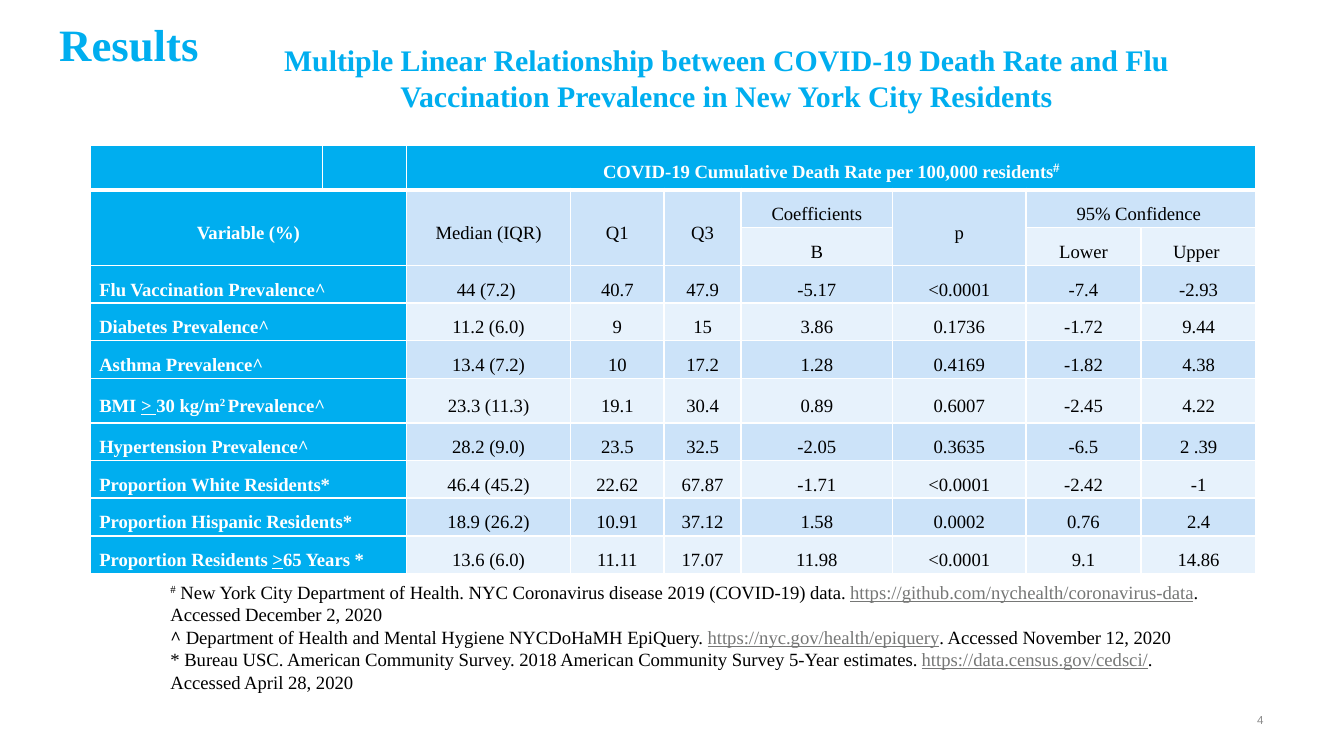
"""Build the regression results slide with its table and source notes."""
from lxml.etree import SubElement
from pptx import Presentation
from pptx.dml.color import RGBColor
from pptx.enum.text import MSO_ANCHOR as Anchor, MSO_AUTO_SIZE as AutoSize, PP_ALIGN as Align
from pptx.oxml.ns import qn
from pptx.util import Pt

SERIF = "Times New Roman"
BLUE, WHITE, BLACK, GREY = "00AEEF", "FFFFFF", "000000", "767776"
STRIPES = ["E7F2FC", "CCE3F9"]


def color(hex_text):
    return RGBColor.from_string(hex_text)


def add_span(para, text, size, hex_text, bold=False, style="", face=SERIF):
    span = para.add_run()
    span.text = text
    span.font.name = face
    span.font.size = Pt(size)
    span.font.bold = bold
    span.font.color.rgb = color(hex_text)
    if style == "underline":
        span.font.underline = True
    if style == "super":
        span.font._element.set("baseline", "30000")


deck = Presentation()
deck.slide_width, deck.slide_height = Pt(720), Pt(405)
page = deck.slides.add_slide(deck.slide_layouts[5])

number_box = page.shapes.add_textbox(Pt(516), Pt(375), Pt(168), Pt(21.6))
number_box.text_frame.vertical_anchor = Anchor.MIDDLE
number_para = number_box.text_frame.paragraphs[0]
number_para.alignment = Align.RIGHT
add_span(number_para, "4", 6.2, "8C8C8C", face="Arial")

heading_box = page.shapes.add_textbox(Pt(106), Pt(18.7), Pt(566.6), Pt(46))
heading_box.text_frame.word_wrap = True
heading_para = heading_box.text_frame.paragraphs[0]
heading_para.alignment = Align.CENTER
add_span(heading_para, "Multiple Linear Relationship between COVID-19 Death Rate and Flu "
         "Vaccination Prevalence in New York City Residents", 16, BLUE, True)

title = page.shapes.title
title.left, title.top, title.width, title.height = Pt(24.5), Pt(5), Pt(648), Pt(36.7)
title.text_frame.auto_size = AutoSize.NONE
title.text_frame.vertical_anchor = Anchor.MIDDLE
title_para = title.text_frame.paragraphs[0]
title_para.alignment = Align.LEFT
add_span(title_para, "Results", 24, BLUE, True)

rows = [
    ["", "", [("COVID-19 Cumulative Death Rate per 100,000 residents", ""), ("#", "super")]] + [""] * 6,
    ["Variable (%)", "", "Median (IQR)", "Q1", "Q3", "Coefficients", "p", "95% Confidence ", ""],
    ["", "", "", "", "", "B", "", "Lower", "Upper "],
    ["Flu Vaccination Prevalence^", "", "44 (7.2) ", "40.7", "47.9", "-5.17", "<0.0001", "-7.4", "-2.93"],
    ["Diabetes Prevalence^", "", "11.2 (6.0)", "9", "15", "3.86", "0.1736", "-1.72", "9.44"],
    ["Asthma Prevalence^", "", "13.4 (7.2)", "10", "17.2", "1.28", "0.4169", "-1.82", "4.38"],
    [[("BMI ", ""), ("> ", "underline"), ("30 kg/m", ""), ("2 ", "super"), ("Prevalence^", "")],
     "", "23.3 (11.3)", "19.1", "30.4", "0.89", "0.6007", "-2.45", "4.22"],
    ["Hypertension Prevalence^", "", "28.2 (9.0)", "23.5", "32.5", "-2.05", "0.3635", "-6.5", "2 .39".replace(" .", " .")],
    ["Proportion White Residents*", "", "46.4 (45.2)", "22.62", "67.87", "-1.71", "<0.0001", "-2.42", "-1"],
    ["Proportion Hispanic Residents*", "", "18.9 (26.2)", "10.91", "37.12", "1.58", "0.0002", "0.76", "2.4"],
    [[("Proportion Residents ", ""), (">", "underline"), ("65 Years *", "")],
     "", "13.6 (6.0)", "11.11", "17.07", "11.98", "<0.0001", "9.1", "14.86"],
]
widths = [124.5, 45.2, 87.7, 50.3, 41.1, 81.3, 71.4, 61.7, 61.7]
table = page.shapes.add_table(len(rows), len(widths), Pt(48.2), Pt(78), Pt(sum(widths)), Pt(229.8)).table
for column, width in zip(table.columns, widths):
    column.width = Pt(width)
for index, row in enumerate(table.rows):
    row.height = Pt(23.8 if index in (0, 6) else 20.2)

for row_index, values in enumerate(rows):
    for column_index, value in enumerate(values):
        cell = table.cell(row_index, column_index)
        header = row_index == 0 or column_index < 2
        cell.margin_left = cell.margin_right = Pt(5)
        cell.margin_top = cell.margin_bottom = Pt(0)
        cell.vertical_anchor = Anchor.MIDDLE
        properties = cell._tc.get_or_add_tcPr()
        for side in "LRTB":
            thick = (row_index, side) in [(0, "B"), (1, "T")]
            line = SubElement(properties, qn(f"a:ln{side}"), w=str(Pt(3 if thick else 1)))
            SubElement(SubElement(line, qn("a:solidFill")), qn("a:srgbClr"), val=WHITE)
        cell.fill.solid()
        cell.fill.fore_color.rgb = color(BLUE if header else STRIPES[row_index % 2])
        if value:
            para = cell.text_frame.paragraphs[0]
            para.alignment = Align.JUSTIFY if column_index == 0 and row_index > 2 else Align.CENTER
            para.line_spacing = Pt(17)
            for text, style in [(value, "")] if isinstance(value, str) else value:
                size = 12 if text == "#" else 10
                add_span(para, text, size, WHITE if header else BLACK, header, style)

merges = [(0, 2, 0, 8), (1, 0, 2, 1), (1, 7, 1, 8)]
merges += [(1, column, 2, column) for column in (2, 3, 4, 6)]
merges += [(row, 0, row, 1) for row in range(3, len(rows))]
for top, left, bottom, right in merges:
    table.cell(top, left).merge(table.cell(bottom, right))

notes = [
    ("#", "super", False, " New York City Department of Health. NYC Coronavirus disease 2019 (COVID-19) data. ",
     "https://github.com/nychealth/coronavirus-data", ". Accessed December 2, 2020"),
    ("^", "", True, " Department of Health and Mental Hygiene NYCDoHaMH EpiQuery. ",
     "https://nyc.gov/health/epiquery", ". Accessed November 12, 2020"),
    ("*", "", False, " Bureau USC. American Community Survey. 2018 American Community Survey 5-Year estimates. ",
     "https://data.census.gov/cedsci/", ". Accessed April 28, 2020"),
]
notes_frame = page.shapes.add_textbox(Pt(84.2), Pt(307.5), Pt(572.4), Pt(90)).text_frame
notes_frame.word_wrap = True
for index, (mark, style, bold, source, address, accessed) in enumerate(notes):
    para = notes_frame.add_paragraph() if index else notes_frame.paragraphs[0]
    add_span(para, mark, 10, BLACK, bold, style)
    add_span(para, source, 10, BLACK)
    add_span(para, address, 10, GREY, style="underline")
    add_span(para, accessed, 10, BLACK)

deck.save("out.pptx")
